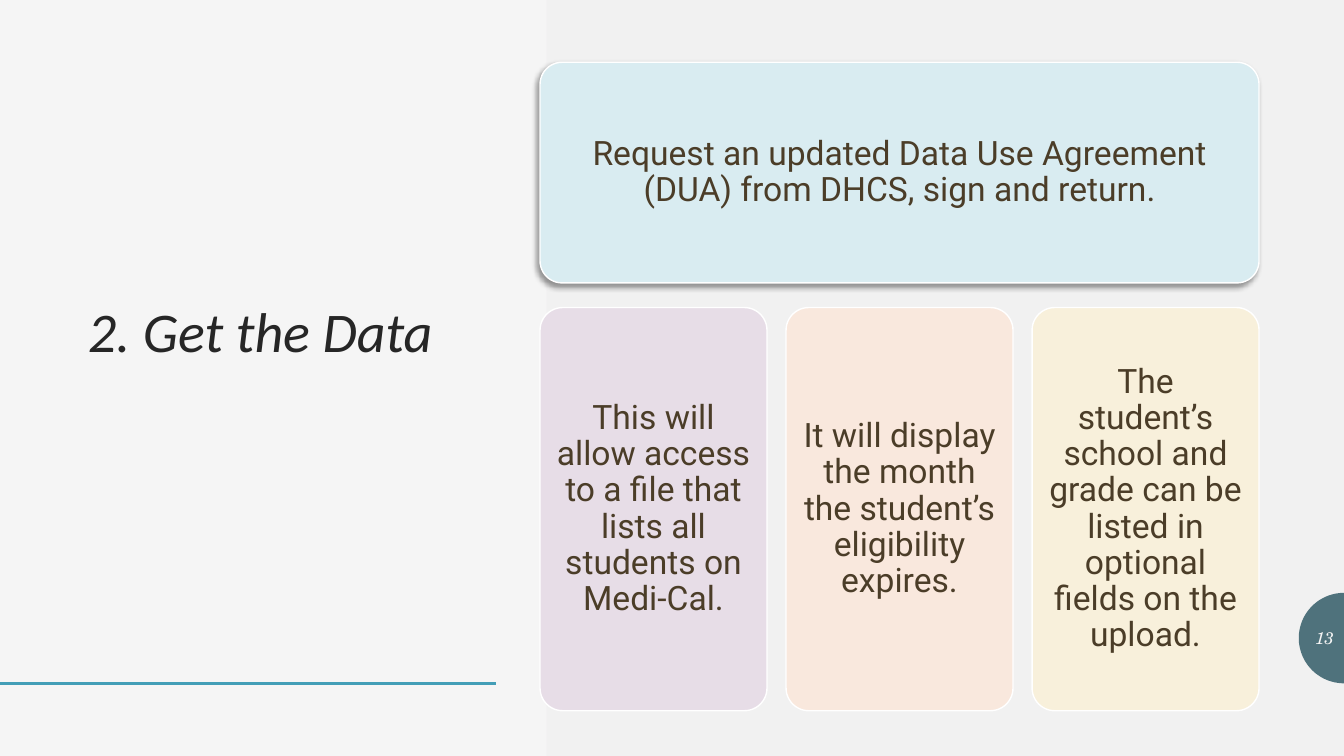
import math

import pptx
import pptx.chart.data
import pptx.dml.color
import pptx.enum.shapes
import pptx.enum.text
import pptx.oxml
import pptx.oxml.ns
import pptx.util
from lxml import etree

Cm, Pt = pptx.util.Cm, pptx.util.Pt
RGB = pptx.dml.color.RGBColor.from_string
SHAPE = pptx.enum.shapes.MSO_SHAPE
ALIGN = pptx.enum.text.PP_ALIGN
MIDDLE = pptx.enum.text.MSO_ANCHOR.MIDDLE
qn = pptx.oxml.ns.qn

COLORS = {
    "paper": "F5F5F5", "panel": "E9E7E9", "rule": "439EB7", "tab": "224F5C",
    "title": "262626", "text": "4B3D28", "border": "FFFFFF", "shadow": "000000",
    "blue": "D9ECF1", "purple": "E7DDE7", "peach": "F9E8DD", "cream": "F8F0DB",
}


def fill_shape(sp, color, opacity=100):
    sp.shadow.inherit = False
    sp.fill.solid()
    sp.fill.fore_color.rgb = RGB(COLORS[color])
    if opacity < 100:
        clr = sp.fill._xPr.find(qn("a:solidFill"))[0]
        etree.SubElement(clr, qn("a:alpha"), val=str(opacity * 1000))


def write(sp, text, align, color, **font):
    tf = sp.text_frame
    tf.word_wrap = True
    tf.vertical_anchor = MIDDLE
    p = tf.paragraphs[0]
    p.alignment = align
    r = p.add_run()
    r.text = text
    r.font.color.rgb = RGB(COLORS[color])
    for name, value in font.items():
        setattr(r.font, name, value)
    return p


prs = pptx.Presentation()
prs.slide_width, prs.slide_height = Cm(33.87), Cm(19.05)
s = prs.slides.add_slide(prs.slide_layouts[5])
s.background.fill.solid()
s.background.fill.fore_color.rgb = RGB(COLORS["paper"])

# Right-hand panel
panel = s.shapes.add_shape(SHAPE.RECTANGLE, Cm(13.77), 0, Cm(20.1), Cm(19.05))
fill_shape(panel, "panel", 25)
panel.line.fill.background()

# Half-round page tab on the right edge
cx, cy, radius = 33.87, 16.08, 1.14
arc = [(Cm(cx - radius * math.sin(math.radians(a))),
        Cm(cy - radius * math.cos(math.radians(a)))) for a in range(0, 181, 4)]
builder = s.shapes.build_freeform(*arc[0], scale=1.0)
builder.add_line_segments(arc[1:], close=True)
tab = builder.convert_to_shape()
fill_shape(tab, "tab", 78)
tab.line.fill.background()

# Rule under the title
rule = s.shapes.add_connector(pptx.enum.shapes.MSO_CONNECTOR.STRAIGHT,
                              0, Cm(17.22), Cm(12.5), Cm(17.22))
rule.line.color.rgb = RGB(COLORS["rule"])
rule.line.width = Pt(2)
etree.SubElement(rule._element.spPr, qn("a:effectLst"))

# Title
title = s.shapes.title
title.left, title.top, title.width, title.height = Cm(1.3), Cm(1.55), Cm(9.86), Cm(13.77)
p = write(title, "2. Get the Data", ALIGN.RIGHT, "title",
          name="Calibri", size=Pt(40), italic=True)
p.line_spacing = 0.9

# Cards: one wide on top, three equal columns below
left, column, pitch = 13.61, 5.72, 6.2
top_row, bottom_row = (1.57, 5.56), (7.75, 10.16)
cards = [
    (0, 2 * pitch + column, top_row, "blue",
     "Request an updated Data Use Agreement (DUA) from DHCS, sign and return."),
    (0, column, bottom_row, "purple",
     "This will allow access to a file that lists all students on Medi-Cal."),
    (1, column, bottom_row, "peach",
     "It will display the month the student’s eligibility expires."),
    (2, column, bottom_row, "cream",
     "The student’s school and grade can be listed in optional fields on the upload."),
]
for col, width, (top, height), color, text in cards:
    sp = s.shapes.add_shape(SHAPE.ROUNDED_RECTANGLE, Cm(left + col * pitch), Cm(top),
                            Cm(width), Cm(height))
    sp.adjustments[0] = 0.1
    fill_shape(sp, color)
    sp.line.color.rgb = RGB(COLORS["border"])
    sp.line.width = Pt(1)
    for side in ("left", "top", "right", "bottom"):
        setattr(sp.text_frame, f"margin_{side}", Cm(0.25))
    p = write(sp, text, ALIGN.CENTER, "text", name="Roboto", size=Pt(24))
    p.line_spacing = 0.9
    if color == "blue":
        effects = sp._element.spPr.find(qn("a:effectLst"))
        shadow = etree.SubElement(effects, qn("a:outerShdw"), blurRad=str(Pt(4)),
                                  dist=str(Pt(3)), dir=str(135 * 60000), rotWithShape="0")
        clr = etree.SubElement(shadow, qn("a:srgbClr"), val=COLORS["shadow"])
        etree.SubElement(clr, qn("a:alpha"), val="40000")

# Page number
number = s.shapes.add_textbox(Cm(32.74), Cm(15.57), Cm(1.13), Cm(1.02))
write(number, "13", ALIGN.RIGHT, "paper", name="TeX Gyre Schola", size=Pt(12), italic=True)

prs.save("out.pptx")
